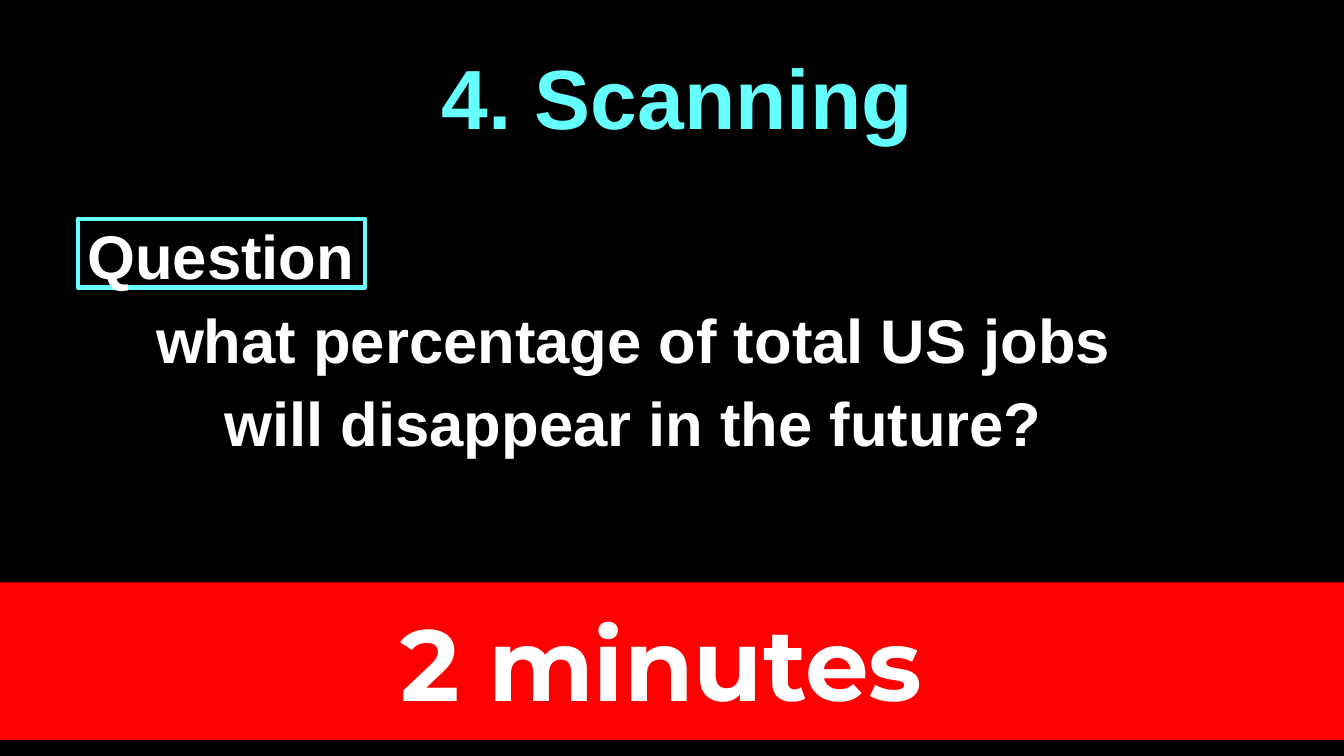
from dataclasses import dataclass

from pptx import Presentation
from pptx.dml.color import RGBColor
from pptx.enum.shapes import MSO_SHAPE
from pptx.enum.text import PP_ALIGN
from pptx.slide import Slide
from pptx.util import Pt

BLACK = "000000"
WHITE = "FFFFFF"
CYAN = "66FFFF"
RED = "FF0000"


@dataclass
class Line:
    text: str
    indent: float = 0


@dataclass
class TextBlock:
    left: float
    top: float
    width: float
    height: float
    lines: list[Line]
    size: float
    color: str
    font: str = "Arial"
    align: PP_ALIGN = PP_ALIGN.LEFT
    space_after: float = 0


@dataclass
class Box:
    left: float
    top: float
    width: float
    height: float
    fill: str | None = None
    line: str | None = None
    line_width: float = 0


def rgb(color: str) -> RGBColor:
    return RGBColor.from_string(color)


def draw_box(slide: Slide, box: Box) -> None:
    shape = slide.shapes.add_shape(
        MSO_SHAPE.RECTANGLE, Pt(box.left), Pt(box.top), Pt(box.width), Pt(box.height)
    )
    shape.shadow.inherit = False
    if box.fill:
        shape.fill.solid()
        shape.fill.fore_color.rgb = rgb(box.fill)
    else:
        shape.fill.background()
    if box.line:
        shape.line.color.rgb = rgb(box.line)
        shape.line.width = Pt(box.line_width)
    else:
        shape.line.fill.background()


def draw_text(slide: Slide, block: TextBlock) -> None:
    shape = slide.shapes.add_textbox(
        Pt(block.left), Pt(block.top), Pt(block.width), Pt(block.height)
    )
    frame = shape.text_frame
    frame.word_wrap = True
    frame.margin_left = frame.margin_right = Pt(0)
    frame.margin_top = frame.margin_bottom = Pt(0)
    for index, line in enumerate(block.lines):
        paragraph = frame.add_paragraph() if index else frame.paragraphs[0]
        paragraph.alignment = block.align
        paragraph.space_after = Pt(block.space_after)
        if line.indent:
            paragraph._p.get_or_add_pPr().set("marL", str(Pt(line.indent)))
        run = paragraph.add_run()
        run.text = line.text
        run.font.name = block.font
        run.font.size = Pt(block.size)
        run.font.bold = True
        run.font.color.rgb = rgb(block.color)


# Red time band and the frame around "Question"
BOXES = [
    Box(-0.7, 416, 970.6, 112.5, fill=RED),
    Box(55.5, 156.3, 205.2, 49, line=CYAN, line_width=3),
]

# Title, question and time limit
TEXTS = [
    TextBlock(55.5, 32.8, 856.8, 70, [Line("4. Scanning")], 60, CYAN,
              align=PP_ALIGN.CENTER),
    TextBlock(62.5, 156, 842, 172, [
        Line("Question"),
        Line("what percentage of total US jobs", indent=49),
        Line("will disappear in the future?", indent=98),
    ], 44, WHITE, space_after=6.75),
    TextBlock(94.3, 429.1, 756, 88, [Line("2 minutes")], 72, WHITE,
              font="Montserrat", align=PP_ALIGN.CENTER),
]


def main() -> None:
    presentation = Presentation()
    presentation.slide_width = Pt(960)
    presentation.slide_height = Pt(540)
    slide = presentation.slides.add_slide(presentation.slide_layouts[6])

    # Black background
    slide.background.fill.solid()
    slide.background.fill.fore_color.rgb = rgb(BLACK)

    for box in BOXES:
        draw_box(slide, box)
    for block in TEXTS:
        draw_text(slide, block)
    presentation.save("out.pptx")


if __name__ == "__main__":
    main()
